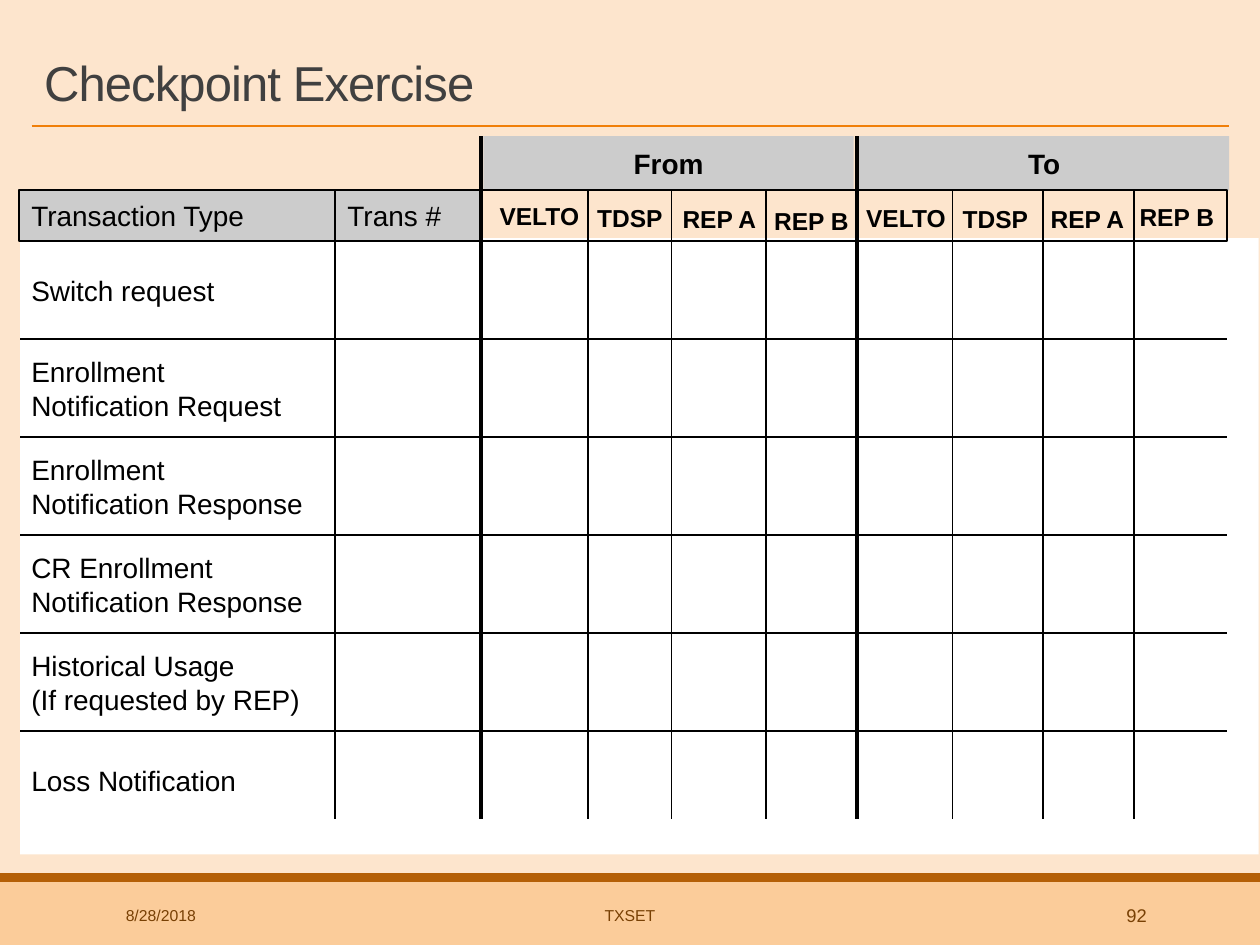
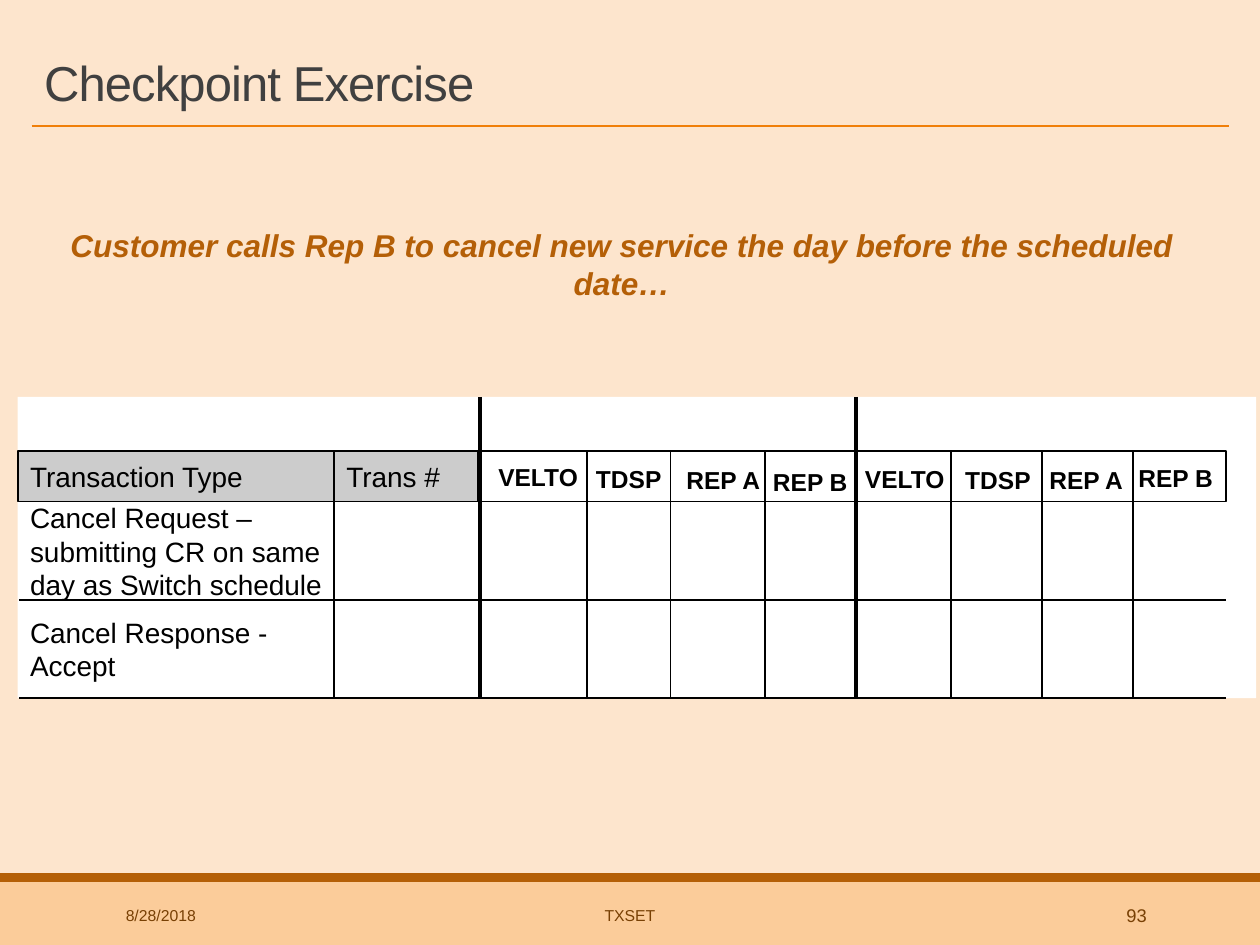
from dataclasses import dataclass, field

from lxml import etree
from pptx import Presentation
from pptx.dml.color import RGBColor
from pptx.enum.shapes import MSO_CONNECTOR, MSO_SHAPE
from pptx.enum.text import MSO_ANCHOR, MSO_AUTO_SIZE, PP_ALIGN
from pptx.oxml.ns import qn
from pptx.util import Pt

RECTANGLE = MSO_SHAPE.RECTANGLE
STRAIGHT = MSO_CONNECTOR.STRAIGHT
TOP, MIDDLE, BOTTOM = MSO_ANCHOR.TOP, MSO_ANCHOR.MIDDLE, MSO_ANCHOR.BOTTOM
NO_AUTOFIT = MSO_AUTO_SIZE.NONE
LEFT, CENTER, RIGHT = PP_ALIGN.LEFT, PP_ALIGN.CENTER, PP_ALIGN.RIGHT

FONT = "Arial"
BLACK, WHITE, GRAY, CHARCOAL = "000000", "FFFFFF", "CCCCCC", "404040"
CREAM, PEACH, ORANGE = "FDE5CD", "FBCC9A", "F07F09"
RUST, BROWN = "B45F07", "784004"

SLIDE_WIDTH, SLIDE_HEIGHT = 720, 540
TABLE_WIDTH = 690.5
TRANS_LEFT = 180.7
GROUP_WIDTH = 211.7
BAND_HEIGHT = 31
HEADER_HEIGHT = 28.8
FIRST_ROW_LINE = 85
ROW_PITCH = 56
ROW_TEXT_TOP, ROW_TEXT_HEIGHT, ROW_TEXT_WIDTH = 31.8, 50.4, 186.5
LABEL_WIDTH, LABEL_HEIGHT = 64.8, 31.7


@dataclass(frozen=True)
class Box:
    left: float
    top: float
    width: float
    height: float


@dataclass(frozen=True)
class TextStyle:
    size: float
    color: str = BLACK
    bold: bool = False
    italic: bool = False
    align: PP_ALIGN = LEFT
    anchor: MSO_ANCHOR = MIDDLE
    vertical_inset: float = 3.6


@dataclass(frozen=True)
class PartyColumn:
    """A party's column; offsets run from the table's left and the header's top."""
    label: str
    line_left: float
    label_left: float
    label_top: float
    line_width: float = 1


@dataclass(frozen=True)
class ExerciseTable:
    left: float
    header_top: float
    bottom: float
    panel: Box
    rows: list[str]
    row_line_count: int
    groups: list[str] = field(default_factory=list)
    label_shifts: dict[int, float] = field(default_factory=dict)


BODY = TextStyle(16)
HEADER = TextStyle(16, vertical_inset=7.2)
GROUP = TextStyle(16, bold=True, align=CENTER)
PARTY = TextStyle(14, bold=True, align=CENTER, vertical_inset=7.2)
PROMPT = TextStyle(18, RUST, bold=True, italic=True, align=CENTER, anchor=TOP)
TITLE = TextStyle(28, CHARCOAL, anchor=BOTTOM)

COLUMNS = [
    PartyColumn("VELTO", 264.2, 265, -1.2, 2.25),
    PartyColumn("TDSP", 325.4, 316.8, 0),
    PartyColumn("REP A", 373, 367.9, 0.4),
    PartyColumn("REP B", 427, 420.5, 1.4),
    PartyColumn("VELTO", 478.8, 474.5, 0, 2.25),
    PartyColumn("TDSP", 533.5, 525.6, 0.2),
    PartyColumn("REP A", 585.4, 578.2, 0.2),
    PartyColumn("REP B", 637.2, 629.3, -0.6),
]

SWITCH_TABLE = ExerciseTable(
    left=10.8, header_top=108.8, bottom=468,
    panel=Box(11.5, 136.1, 707.8, 352.1),
    rows=["Switch request",
          "Enrollment\nNotification Request",
          "Enrollment\nNotification Response",
          "CR Enrollment\nNotification Response",
          "Historical Usage\n(If requested by REP)",
          "Loss Notification"],
    row_line_count=5,
    groups=["From", "To"],
)
CANCEL_TABLE = ExerciseTable(
    left=10.1, header_top=257.8, bottom=399.4,
    panel=Box(10.1, 226.8, 707.8, 172.1),
    rows=["Cancel Request – submitting CR on same day as Switch schedule",
          "Cancel Response - Accept"],
    row_line_count=2,
    label_shifts={2: 2.9, 5: 2.2},
)


def rgb(color: str) -> RGBColor:
    return RGBColor.from_string(color)


def place(shape, box: Box) -> None:
    shape.left, shape.top = Pt(box.left), Pt(box.top)
    shape.width, shape.height = Pt(box.width), Pt(box.height)


def write(shape, text: str, style: TextStyle) -> None:
    frame = shape.text_frame
    frame.text = text
    frame.word_wrap = True
    frame.auto_size = NO_AUTOFIT
    frame.vertical_anchor = style.anchor
    frame.margin_left = frame.margin_right = Pt(7.2)
    frame.margin_top = frame.margin_bottom = Pt(style.vertical_inset)
    for paragraph in frame.paragraphs:
        paragraph.alignment = style.align
        font = paragraph.font
        font.name, font.size = FONT, Pt(style.size)
        font.bold, font.italic = style.bold, style.italic
        font.color.rgb = rgb(style.color)


def add_text(slide, box: Box, text: str, style: TextStyle) -> None:
    text_box = slide.shapes.add_textbox(0, 0, 0, 0)
    write(text_box, text, style)
    place(text_box, box)


def add_rectangle(slide, box: Box, fill: str | None, line: str | None = None):
    shape = slide.shapes.add_shape(RECTANGLE, 0, 0, 0, 0)
    place(shape, box)
    shape.shadow.inherit = False
    if fill:
        shape.fill.solid()
        shape.fill.fore_color.rgb = rgb(fill)
    else:
        shape.fill.background()
    if line:
        shape.line.color.rgb = rgb(line)
        shape.line.width = Pt(1)
    else:
        shape.line.fill.background()
    return shape


def add_line(slide, start: tuple[float, float], end: tuple[float, float],
             color: str = BLACK, width: float = 1) -> None:
    connector = slide.shapes.add_connector(
        STRAIGHT, Pt(start[0]), Pt(start[1]), Pt(end[0]), Pt(end[1]))
    connector.line.color.rgb = rgb(color)
    connector.line.width = Pt(width)
    etree.SubElement(connector._element.spPr, qn("a:effectLst"))


def add_exercise_slide(presentation, page_number: int):
    """Add a slide with the shared title, rule and footer."""
    slide = presentation.slides.add_slide(presentation.slide_layouts[5])
    add_rectangle(slide, Box(0, 504, SLIDE_WIDTH, 36), PEACH)
    add_rectangle(slide, Box(0, 499, SLIDE_WIDTH, 5), RUST)
    add_line(slide, (18, 72), (702, 72), ORANGE)

    title = slide.shapes.title
    place(title, Box(18, 18, 594, 49.2))
    write(title, "Checkpoint Exercise", TITLE)
    paragraph = title.text_frame.paragraphs[0]
    paragraph.line_spacing = 0.85
    paragraph.runs[0]._r.get_or_add_rPr().set("spc", "-50")

    for left, width, text, size, align in (
            (64.8, 146.2, "8/28/2018", 9, LEFT),
            (217.4, 285.1, "TXSET", 9, CENTER),
            (584.6, 77.8, str(page_number), 10.5, RIGHT)):
        add_text(slide, Box(left, 508.6, width, 28.8), text,
                 TextStyle(size, BROWN, align=align))
    return slide


def add_header(slide, table: ExerciseTable) -> None:
    left, top = table.left, table.header_top
    frame = add_rectangle(slide, Box(left, top, TABLE_WIDTH, HEADER_HEIGHT), None, BLACK)
    write(frame, "Transaction Type", HEADER)
    for index, column in enumerate(COLUMNS):
        label_left = left + column.label_left + table.label_shifts.get(index, 0)
        add_text(slide, Box(label_left, top + column.label_top, LABEL_WIDTH, LABEL_HEIGHT),
                 column.label, PARTY)
    trans = add_rectangle(
        slide, Box(left + TRANS_LEFT, top, 82.5, HEADER_HEIGHT), GRAY, BLACK)
    write(trans, "Trans #", HEADER)


def add_exercise_table(slide, table: ExerciseTable) -> None:
    left, top = table.left, table.header_top
    band_top = top - BAND_HEIGHT
    group_columns = [column for column in COLUMNS if column.line_width > 1]
    for group, column in zip(table.groups, group_columns):
        band = add_rectangle(
            slide, Box(left + column.line_left + 1.2, band_top, GROUP_WIDTH, BAND_HEIGHT), GRAY)
        write(band, group, GROUP)

    add_rectangle(slide, table.panel, WHITE)
    add_rectangle(slide, Box(left, top, TRANS_LEFT, HEADER_HEIGHT), GRAY)

    add_line(slide, (left + TRANS_LEFT, top), (left + TRANS_LEFT, table.bottom))
    for column in COLUMNS:
        x = left + column.line_left
        line_top = band_top if column in group_columns else top
        add_line(slide, (x, line_top), (x, table.bottom), width=column.line_width)
    for index in range(table.row_line_count):
        y = top + FIRST_ROW_LINE + index * ROW_PITCH
        add_line(slide, (left + 0.7, y), (left + TABLE_WIDTH, y))
    for index, text in enumerate(table.rows):
        row_top = top + ROW_TEXT_TOP + index * ROW_PITCH
        add_text(slide, Box(left, row_top, ROW_TEXT_WIDTH, ROW_TEXT_HEIGHT), text, BODY)
    add_header(slide, table)


def main() -> None:
    presentation = Presentation()
    presentation.slide_width, presentation.slide_height = Pt(SLIDE_WIDTH), Pt(SLIDE_HEIGHT)
    background = presentation.slide_master.background.fill
    background.solid()
    background.fore_color.rgb = rgb(CREAM)

    switch_slide = add_exercise_slide(presentation, 92)
    add_exercise_table(switch_slide, SWITCH_TABLE)

    cancel_slide = add_exercise_slide(presentation, 93)
    add_exercise_table(cancel_slide, CANCEL_TABLE)
    add_text(cancel_slide, Box(15.1, 125.6, 680.4, 51.1),
             "Customer calls Rep B to cancel new service the day before the scheduled date…",
             PROMPT)
    presentation.save("out.pptx")


if __name__ == "__main__":
    main()
